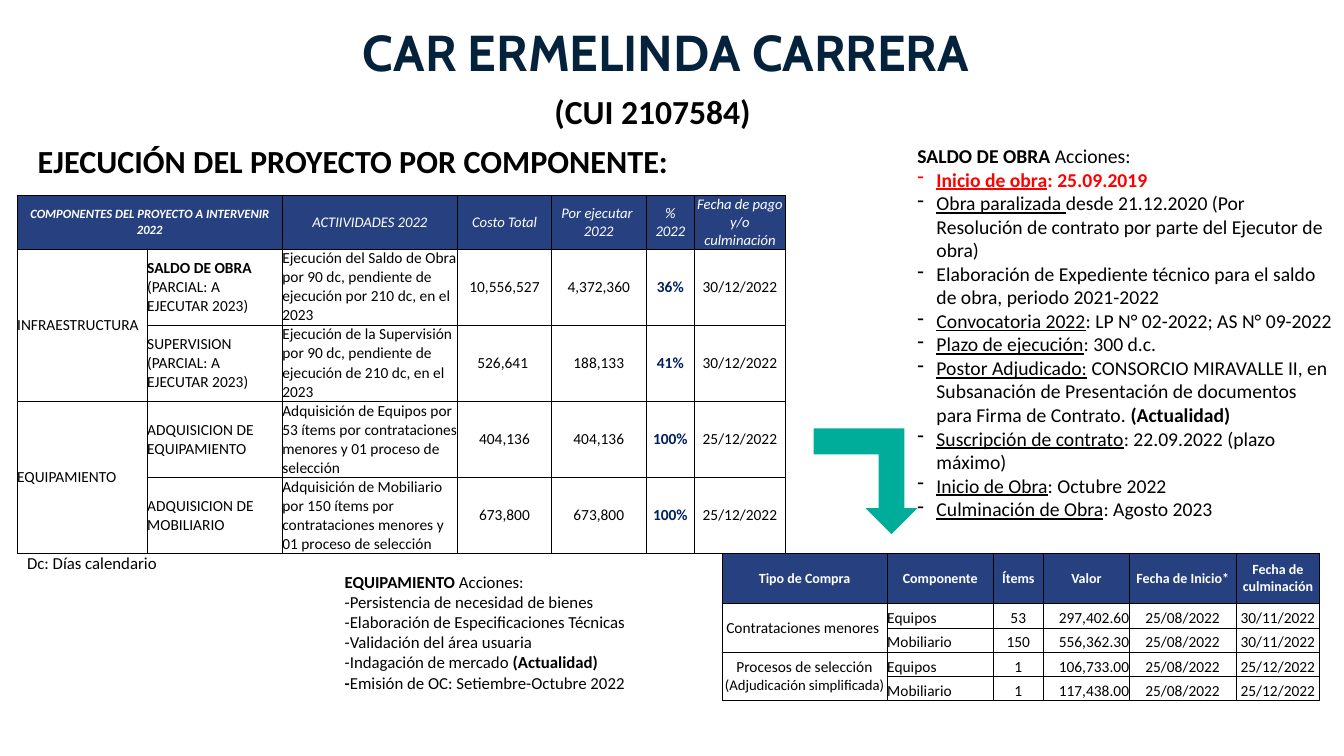
import pptx
import pptx.util
import pptx.dml.color
import pptx.enum.shapes
import pptx.enum.text
import pptx.oxml
import pptx.oxml.ns

Inches = pptx.util.Inches
Pt = pptx.util.Pt
RGBColor = pptx.dml.color.RGBColor
Align = pptx.enum.text.PP_ALIGN
Anchor = pptx.enum.text.MSO_ANCHOR

BLACK = RGBColor(0, 0, 0)
WHITE = RGBColor(255, 255, 255)
RED = RGBColor(255, 0, 0)
HEADER_BLUE = RGBColor(0x26, 0x40, 0x80)
PERCENT_BLUE = RGBColor(0, 0x20, 0x60)
TITLE_BLUE = RGBColor(0x05, 0x22, 0x3C)
TEAL = RGBColor(0, 0xAD, 0x9A)

BOLD = {"bold": True}
UNDERLINE = {"underline": True}


class SlideBuilder:
    base = {"name": "Calibri", "size": Pt(12), "color": BLACK}
    hanging = Inches(0.19)

    def __init__(self, slide):
        self.slide = slide

    def fill_text(self, frame, paragraphs, style, align=Align.LEFT, bullets_from=None, spacing=None):
        for index, content in enumerate(paragraphs):
            paragraph = frame.paragraphs[0] if index == 0 else frame.add_paragraph()
            paragraph.alignment = align
            if spacing:
                paragraph.line_spacing = spacing
            if bullets_from is not None and index >= bullets_from:
                self.bullet(paragraph)
            for text, changes in [(content, {})] if isinstance(content, str) else content:
                run = paragraph.add_run()
                run.text = text
                for name, value in {**self.base, **style, **changes}.items():
                    if name == "color":
                        run.font.color.rgb = value
                    else:
                        setattr(run.font, name, value)

    def bullet(self, paragraph):
        properties = paragraph._p.get_or_add_pPr()
        properties.set("marL", str(self.hanging))
        properties.set("indent", str(-self.hanging))
        properties.append(pptx.oxml.parse_xml(
            f'<a:buChar {pptx.oxml.ns.nsdecls("a")} char="-"/>'))

    def text(self, box, paragraphs, style, anchor=Anchor.TOP, **layout):
        frame = self.slide.shapes.add_textbox(*map(Inches, box)).text_frame
        frame.word_wrap = True
        frame.vertical_anchor = anchor
        self.fill_text(frame, paragraphs, style, **layout)

    def borders(self, cell, width, bottom):
        properties = cell._tc.get_or_add_tcPr()
        for side, points in (("L", width), ("R", width), ("T", width), ("B", bottom)):
            properties.append(pptx.oxml.parse_xml(
                f'<a:ln{side} {pptx.oxml.ns.nsdecls("a")} w="{Pt(points)}"><a:solidFill>'
                f'<a:srgbClr val="{BLACK}"/></a:solidFill></a:ln{side}>'))

    def table(self, corner, widths, heights, rows, header, columns, merges, header_border):
        size = sum(widths), sum(heights)
        table = self.slide.shapes.add_table(
            len(rows), len(widths), *map(Inches, corner + size)).table
        table.first_row = table.horz_banding = False
        for column, width in zip(table.columns, widths):
            column.width = Inches(width)
        for row, height in zip(table.rows, heights):
            row.height = Inches(height)
        for row_index, row in enumerate(rows):
            for column_index, content in enumerate(row):
                cell = table.cell(row_index, column_index)
                align, anchor, style = columns[column_index]
                fill = WHITE
                border = 0.5
                if row_index == 0:
                    align, anchor, style, fill = Align.CENTER, Anchor.MIDDLE, header, HEADER_BLUE
                    border = header_border
                self.borders(cell, border, 0.5)
                cell.fill.solid()
                cell.fill.fore_color.rgb = fill
                cell.vertical_anchor = anchor
                for side in ("left", "right", "top", "bottom"):
                    setattr(cell, f"margin_{side}", 0)
                if content is not None:
                    paragraphs = content.split("\n") if isinstance(content, str) else content
                    self.fill_text(cell.text_frame, paragraphs, style, align)
        for first, last in merges:
            table.cell(*first).merge(table.cell(*last))

    def arrow(self, box):
        shape = self.slide.shapes.add_shape(
            pptx.enum.shapes.MSO_SHAPE.BENT_UP_ARROW, *map(Inches, box))
        shape.element.spPr.find(pptx.oxml.ns.qn("a:xfrm")).set("flipV", "1")
        shape.shadow.inherit = False
        shape.fill.solid()
        shape.fill.fore_color.rgb = TEAL
        shape.line.fill.background()


def main():
    presentation = pptx.Presentation()
    presentation.slide_width = Inches(13.33)
    presentation.slide_height = Inches(7.5)
    builder = SlideBuilder(presentation.slides.add_slide(presentation.slide_layouts[6]))

    body = {"size": Pt(11)}
    left = (Align.LEFT, Anchor.MIDDLE, body)
    center = (Align.CENTER, Anchor.MIDDLE, body)
    percent = (Align.CENTER, Anchor.MIDDLE, {**body, **BOLD, "color": PERCENT_BLUE})
    low_left, low_center, low_right = (
        (align, Anchor.BOTTOM, body) for align in (Align.LEFT, Align.CENTER, Align.RIGHT))

    builder.table(
        (0.17, 1.94), (1.29, 1.34, 1.74, 0.93, 0.94, 0.48, 0.9), (0.53,) + (0.75,) * 4,
        [
            [[[("COMPONENTES DEL PROYECTO A INTERVENIR 2022", {"size": Pt(9), "bold": True})]],
             None, "ACTIIVIDADES 2022", "Costo Total", "Por ejecutar \n2022", "%\n2022",
             "Fecha de pago y/o culminación"],
            ["INFRAESTRUCTURA", [[("SALDO DE OBRA", BOLD)], "(PARCIAL: A EJECUTAR 2023)"],
             "Ejecución del Saldo de Obra por 90 dc, pendiente de ejecución por 210 dc, en el 2023",
             "10,556,527", "4,372,360", "36%", "30/12/2022"],
            [None, "SUPERVISION\n(PARCIAL: A EJECUTAR 2023)",
             "Ejecución de la Supervisión por 90 dc, pendiente de ejecución de 210 dc, en el 2023",
             "526,641 ", "188,133", "41%", "30/12/2022"],
            ["EQUIPAMIENTO", "ADQUISICION DE EQUIPAMIENTO",
             "Adquisición de Equipos por 53 ítems por contrataciones menores y 01 proceso de selección",
             "404,136", "404,136", "100%", "25/12/2022"],
            [None, "ADQUISICION DE MOBILIARIO",
             "Adquisición de Mobiliario por 150 ítems por contrataciones menores y 01 proceso de selección",
             "673,800", "673,800", "100%", "25/12/2022"],
        ],
        {"size": Pt(10.5), "italic": True, "color": WHITE},
        (left, left, left, center, center, percent, center),
        [((0, 0), (0, 1)), ((1, 0), (2, 0)), ((3, 0), (4, 0))], 1)

    builder.text((-0.28, 1.35, 7.57, 0.49), ["EJECUCIÓN DEL PROYECTO POR COMPONENTE:"],
                 {**BOLD, "size": Pt(23)}, align=Align.CENTER)

    builder.table(
        (7.16, 5.49), (1.64, 1.05, 0.5, 0.85, 1.06, 0.83), (0.5,) + (0.24,) * 4,
        [
            ["Tipo de Compra", "Componente", "Ítems", "Valor", "Fecha de Inicio*",
             "Fecha de culminación"],
            ["Contrataciones menores ", "Equipos", "53", "297,402.60", "25/08/2022", "30/11/2022"],
            [None, "Mobiliario", "150", "556,362.30", "25/08/2022", "30/11/2022"],
            [["Procesos de selección", [("(Adjudicación simplificada)", {"size": Pt(10.5)})]],
             "Equipos", "1", "106,733.00", "25/08/2022", "25/12/2022"],
            [None, "Mobiliario", "1", "117,438.00", "25/08/2022", "25/12/2022"],
        ],
        {**BOLD, "size": Pt(10), "color": WHITE},
        (center, low_left, low_center, low_right, low_center, low_center),
        [((1, 0), (2, 0)), ((3, 0), (4, 0))], 0.5)

    builder.arrow((8.07, 4.25, 1.03, 1.05))

    builder.text((3.32, 5.62, 3.11, 1.31), [
        [("EQUIPAMIENTO ", BOLD), ("Acciones:", {})],
        "-Persistencia de necesidad de bienes",
        "-Elaboración de Especificaciones Técnicas",
        "-Validación del área usuaria",
        [("-Indagación de mercado ", {}), ("(Actualidad)", BOLD)],
        [("-", BOLD), ("Emisión de OC: Setiembre-Octubre 2022", {})],
    ], {})

    red_bold = {**BOLD, "color": RED}
    builder.text((9, 1.38, 4.33, 4.11), [
        [("SALDO DE OBRA ", BOLD), ("Acciones:", {})],
        [("Inicio de obra", {**red_bold, **UNDERLINE}), (": 25.09.2019", red_bold)],
        [("Obra paralizada ", UNDERLINE),
         ("desde 21.12.2020 (Por Resolución de contrato por parte del Ejecutor de obra)", {})],
        "Elaboración de Expediente técnico para el saldo de obra, periodo 2021-2022",
        [("Convocatoria 2022", UNDERLINE), (": LP N° 02-2022; AS N° 09-2022", {})],
        [("Plazo de ejecución", UNDERLINE), (": 300 d.c.", {})],
        [("Postor Adjudicado:", UNDERLINE),
         (" CONSORCIO MIRAVALLE II, en Subsanación de Presentación de documentos"
          " para Firma de Contrato. ", {}),
         ("(Actualidad)", BOLD)],
        [("Suscripción de contrato", UNDERLINE), (": 22.09.2022 (plazo máximo)", {})],
        [("Inicio de Obra", UNDERLINE), (": Octubre 2022", {})],
        [("Culminación de Obra", UNDERLINE), (": Agosto 2023", {})],
    ], {"size": Pt(14)}, bullets_from=1)

    builder.text((3.5, 0.13, 6.91, 0.74), ["CAR ERMELINDA CARRERA"],
                 {**BOLD, "name": "Cabin", "size": Pt(36), "color": TITLE_BLUE},
                 Anchor.BOTTOM, spacing=0.9)
    builder.text((4.99, 0.85, 2.89, 0.5), [" (CUI 2107584)"],
                 {**BOLD, "size": Pt(24)}, align=Align.CENTER)
    builder.text((0.17, 5.43, 2.2, 0.3), ["Dc: Días calendario"], {})

    presentation.save("out.pptx")


if __name__ == "__main__":
    main()
